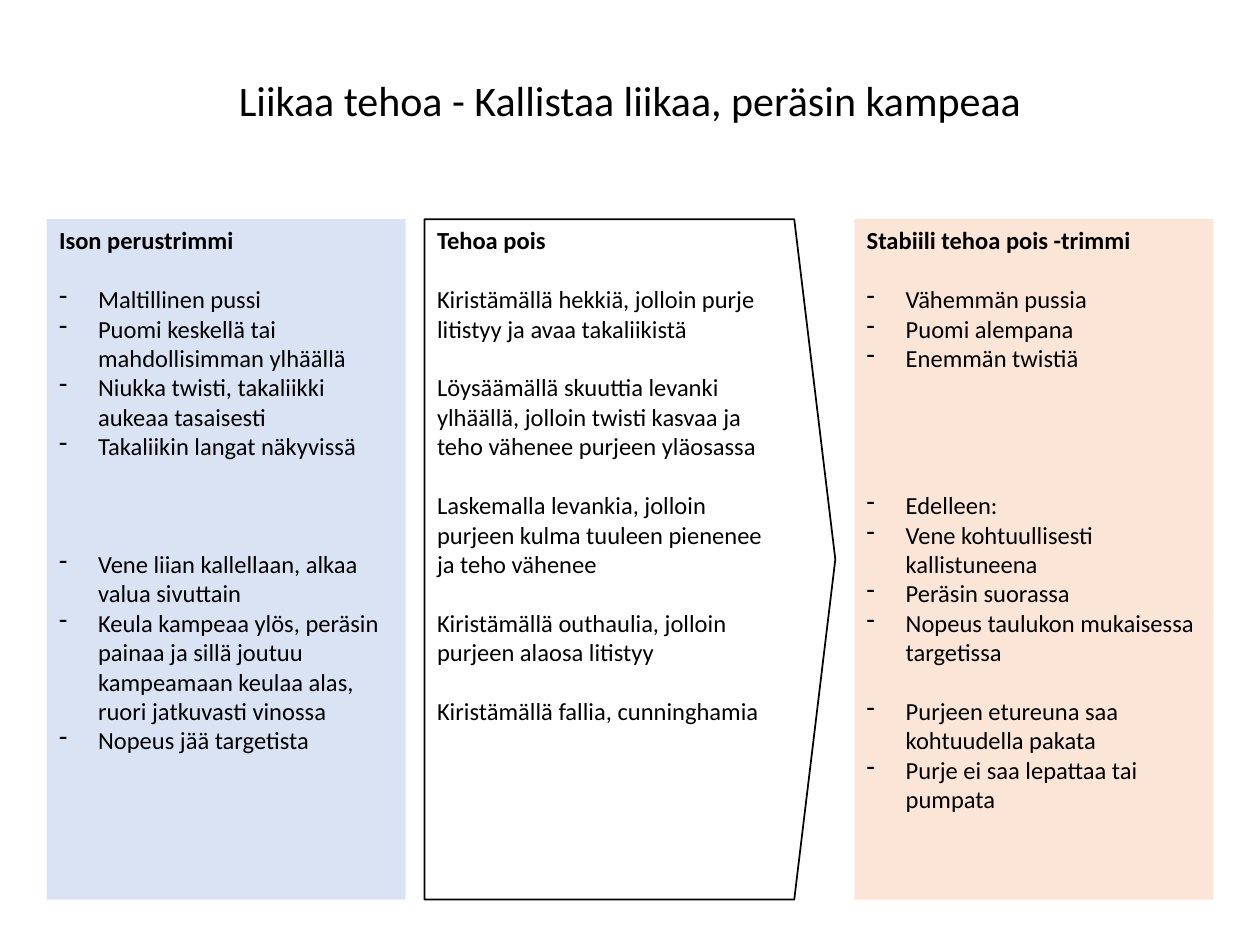
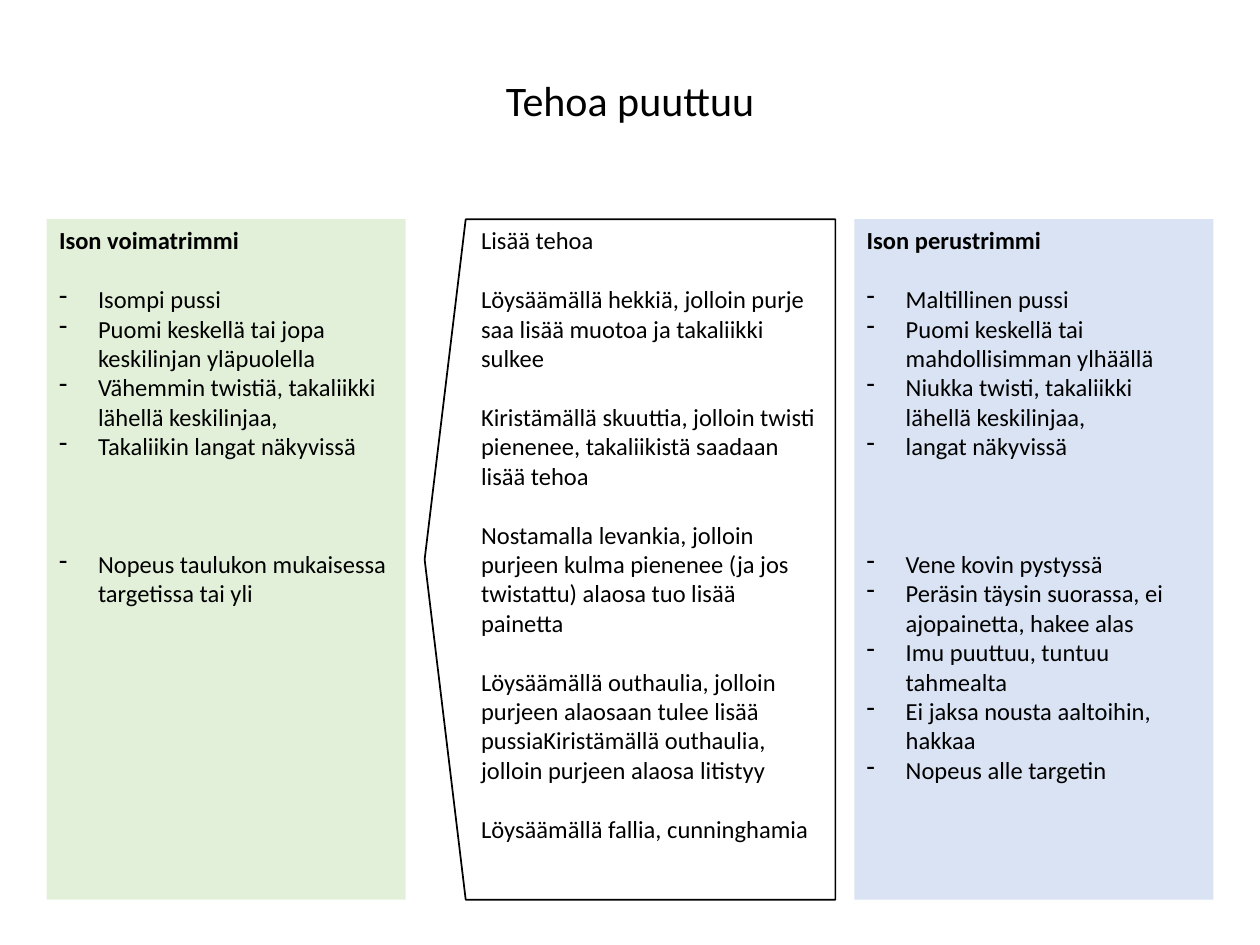
from lxml import etree
from pptx import Presentation
from pptx import util as u
from pptx.dml.color import RGBColor
from pptx.enum import shapes, text
from pptx.oxml import ns

BLUE, PEACH, GREEN, BLACK = "DAE3F3", "FBE5D6", "E2F0D9", "000000"
FONT, BODY, LINE, INDENT = "Calibri", 14, 16.8, 0.31
W, H = 10, 7.5
MARGIN, GAP, COL = 0.37, 0.15, 2.85
TOP, HEIGHT = 1.74, 5.4
RIGHT = W - MARGIN - COL
MID = MARGIN + COL + GAP
MID_W = RIGHT - GAP - MID


def rgb(code):
    return RGBColor.from_string(code)


def write(tf, txt, size=BODY, bold=False, gap=0, dash=False, align=text.PP_ALIGN.LEFT):
    tf.word_wrap = True
    tf.auto_size = text.MSO_AUTO_SIZE.NONE
    tf.vertical_anchor = text.MSO_ANCHOR.TOP
    p = tf.paragraphs[0]
    if p.runs:
        p = tf.add_paragraph()
    p.alignment = align
    p.space_before = u.Pt(gap * LINE)
    if dash:
        pPr = p._p.get_or_add_pPr()
        pPr.set("marL", str(u.Inches(INDENT)))
        pPr.set("indent", str(u.Inches(-INDENT)))
        etree.SubElement(pPr, ns.qn("a:buFontTx"))
        etree.SubElement(pPr, ns.qn("a:buChar")).set("char", "-")
    r = p.add_run()
    r.text = txt
    r.font.name, r.font.size, r.font.bold = FONT, u.Pt(size), bold
    r.font.color.rgb = rgb(BLACK)


pages = [
    dict(
        title="Liikaa tehoa - Kallistaa liikaa, peräsin kampeaa",
        panels=[
            (MARGIN, BLUE, "Ison perustrimmi", [
                (1, ["Maltillinen pussi",
                     "Puomi keskellä tai mahdollisimman ylhäällä",
                     "Niukka twisti, takaliikki aukeaa tasaisesti",
                     "Takaliikin langat näkyvissä"]),
                (3, ["Vene liian kallellaan, alkaa valua sivuttain",
                     "Keula kampeaa ylös, peräsin painaa ja sillä joutuu kampeamaan "
                     "keulaa alas, ruori jatkuvasti vinossa",
                     "Nopeus jää targetista"])]),
            (RIGHT, PEACH, "Stabiili tehoa pois -trimmi", [
                (1, ["Vähemmän pussia", "Puomi alempana", "Enemmän twistiä"]),
                (4, ["Edelleen:",
                     "Vene kohtuullisesti kallistuneena",
                     "Peräsin suorassa",
                     "Nopeus taulukon mukaisessa targetissa"]),
                (1, ["Purjeen etureuna saa kohtuudella pakata",
                     "Purje ei saa lepattaa tai pumpata"])])],
        arrow=dict(turn=0, left=MID, width=COL, bold=True, head="Tehoa pois", steps=[
            "Kiristämällä hekkiä, jolloin purje litistyy ja avaa takaliikistä",
            "Löysäämällä skuuttia levanki ylhäällä, jolloin twisti kasvaa ja teho "
            "vähenee purjeen yläosassa",
            "Laskemalla levankia, jolloin purjeen kulma tuuleen pienenee ja teho vähenee",
            "Kiristämällä outhaulia, jolloin purjeen alaosa litistyy",
            "Kiristämällä fallia, cunninghamia"])),
    dict(
        title="Tehoa puuttuu",
        panels=[
            (MARGIN, GREEN, "Ison voimatrimmi", [
                (1, ["Isompi pussi",
                     "Puomi keskellä tai jopa keskilinjan yläpuolella",
                     "Vähemmin twistiä, takaliikki lähellä keskilinjaa,",
                     "Takaliikin langat näkyvissä"]),
                (3, ["Nopeus taulukon mukaisessa targetissa tai yli"])]),
            (RIGHT, BLUE, "Ison perustrimmi", [
                (1, ["Maltillinen pussi",
                     "Puomi keskellä tai mahdollisimman ylhäällä",
                     "Niukka twisti, takaliikki lähellä keskilinjaa,",
                     "langat näkyvissä"]),
                (3, ["Vene kovin pystyssä",
                     "Peräsin täysin suorassa, ei ajopainetta, hakee alas",
                     "Imu puuttuu, tuntuu tahmealta",
                     "Ei jaksa nousta aaltoihin, hakkaa",
                     "Nopeus alle targetin"])])],
        arrow=dict(turn=180, left=MID + 0.35, width=2.9, bold=False, head="Lisää tehoa", steps=[
            "Löysäämällä hekkiä, jolloin purje saa lisää muotoa ja takaliikki sulkee",
            "Kiristämällä skuuttia, jolloin twisti pienenee, takaliikistä saadaan lisää tehoa",
            "Nostamalla levankia, jolloin purjeen kulma pienenee (ja jos twistattu) "
            "alaosa tuo lisää painetta",
            "Löysäämällä outhaulia, jolloin purjeen alaosaan tulee lisää "
            "pussiaKiristämällä outhaulia, jolloin purjeen alaosa litistyy",
            "Löysäämällä fallia, cunninghamia"])),
]

prs = Presentation()
prs.slide_width, prs.slide_height = u.Inches(W), u.Inches(H)
y, h = u.Inches(TOP), u.Inches(HEIGHT)

for page in pages:
    s = prs.slides.add_slide(prs.slide_layouts[5])
    title = s.shapes.title
    title.left, title.top = u.Inches(MARGIN), u.Inches(0.54)
    title.width, title.height = u.Inches(W - 2 * MARGIN), u.Inches(0.74)
    write(title.text_frame, page["title"], size=24, align=text.PP_ALIGN.CENTER)

    for left, fill, head, groups in page["panels"]:
        sp = s.shapes.add_shape(shapes.MSO_SHAPE.RECTANGLE, u.Inches(left), y, u.Inches(COL), h)
        sp.shadow.inherit = False
        sp.fill.solid()
        sp.fill.fore_color.rgb = rgb(fill)
        sp.line.fill.background()
        write(sp.text_frame, head, bold=True)
        for gap, items in groups:
            for i, item in enumerate(items):
                write(sp.text_frame, item, gap=0 if i else gap, dash=True)

    arrow = page["arrow"]
    box = s.shapes.add_textbox(u.Inches(arrow["left"]), y, u.Inches(arrow["width"]), h)
    write(box.text_frame, arrow["head"], bold=arrow["bold"])
    for step in arrow["steps"]:
        write(box.text_frame, step, gap=1)

    sp = s.shapes.add_shape(shapes.MSO_SHAPE.PENTAGON, u.Inches(MID), y, u.Inches(MID_W), h)
    sp.adjustments[0] = 0.1
    sp.rotation = arrow["turn"]
    sp.shadow.inherit = False
    sp.fill.background()
    sp.line.color.rgb = rgb(BLACK)
    sp.line.width = u.Pt(1)

prs.save("out.pptx")
